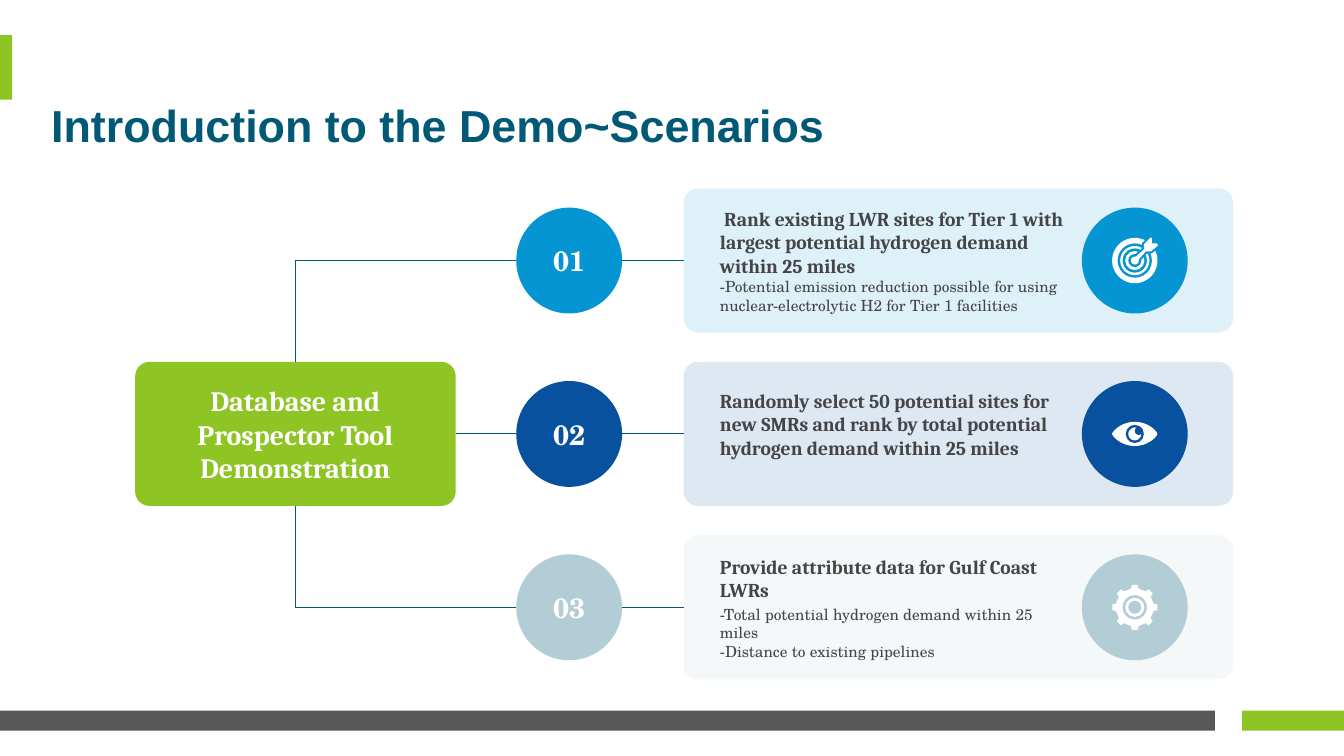
from dataclasses import dataclass
from math import cos, pi, sin

from lxml.etree import SubElement
from pptx import Presentation
from pptx.dml.color import RGBColor
from pptx.enum.shapes import MSO_CONNECTOR as CONN, MSO_SHAPE as SHAPE
from pptx.enum.text import MSO_ANCHOR as ANCHOR, PP_ALIGN as ALIGN
from pptx.oxml.ns import qn
from pptx.util import Inches, Pt


@dataclass(frozen=True)
class Theme:
    green: str = "8EC423"
    gray: str = "58575A"
    teal: str = "015976"
    text: str = "454446"
    white: str = "FFFFFF"
    rows: tuple = ("0595D3", "07519E", "B2CDD6")
    card_alpha: int = 13
    title_font: str = "Arial"
    head_font: str = "Cambria"
    body_font: str = "TeX Gyre Schola"
    title_size: int = 32
    label_size: int = 20
    head_size: int = 14
    body_size: int = 11
    line_width: float = 0.75


class Deck:
    def __init__(self, theme):
        self.t = theme
        self.prs = Presentation()
        self.prs.slide_width = Inches(13.33)
        self.prs.slide_height = Inches(7.5)
        self.s = self.prs.slides.add_slide(self.prs.slide_layouts[6])

    def paint(self, sp, color):
        sp.shadow.inherit = False
        sp.fill.solid()
        sp.fill.fore_color.rgb = RGBColor.from_string(color)
        sp.line.fill.background()

    def shape(self, kind, x, y, w, h, color, alpha=None):
        sp = self.s.shapes.add_shape(kind, Inches(x), Inches(y), Inches(w), Inches(h))
        self.paint(sp, color)
        if kind == SHAPE.ROUNDED_RECTANGLE:
            sp.adjustments[0] = 0.1
        if alpha:
            clr = sp._element.spPr.find(qn("a:solidFill"))[0]
            SubElement(clr, qn("a:alpha"), val=str(alpha * 1000))
        return sp

    def circle(self, cx, cy, d, color):
        return self.shape(SHAPE.OVAL, cx - d / 2, cy - d / 2, d, d, color)

    def rings(self, cx, cy, diameters, colors):
        for i, d in enumerate(diameters):
            self.circle(cx, cy, d, colors[i % 2])

    def polygon(self, cx, cy, points, color, outline=None):
        pts = [(Inches(cx + x), Inches(cy + y)) for x, y in points]
        fb = self.s.shapes.build_freeform(*pts[0])
        fb.add_line_segments(pts[1:], close=True)
        sp = fb.convert_to_shape()
        self.paint(sp, color)
        if outline:
            sp.line.color.rgb = RGBColor.from_string(color)
            sp.line.width = Pt(outline)

    def line(self, x1, y1, x2, y2, bent=False):
        c = self.s.shapes.add_connector(
            CONN.ELBOW if bent else CONN.STRAIGHT,
            Inches(x1), Inches(y1), Inches(x2), Inches(y2))
        c.line.color.rgb = RGBColor.from_string(self.t.teal)
        c.line.width = Pt(self.t.line_width)
        spPr = c._element.spPr
        if bent:
            spPr.find(qn("a:prstGeom")).set("prst", "bentConnector2")
        SubElement(spPr, qn("a:effectLst"))

    def style(self, p, text, font, size, color, bold=True):
        p.add_run().text = text
        f = p.font
        f.name, f.size, f.bold = font, Pt(size), bold
        f.color.rgb = RGBColor.from_string(color)

    def label(self, sp, text, font):
        tf = sp.text_frame
        tf.word_wrap = True
        tf.vertical_anchor = ANCHOR.MIDDLE
        tf.margin_left = tf.margin_right = tf.margin_top = tf.margin_bottom = Inches(0.1)
        p = tf.paragraphs[0]
        p.alignment = ALIGN.CENTER
        self.style(p, text, font, self.t.label_size, self.t.white)

    def textbox(self, x, y, w, h):
        tf = self.s.shapes.add_textbox(Inches(x), Inches(y), Inches(w), Inches(h)).text_frame
        tf.word_wrap = True
        return tf

    def title(self, text):
        p = self.textbox(0.41, 0.98, 11.81, 0.69).paragraphs[0]
        p.line_spacing = 0.9
        self.style(p, text, self.t.title_font, self.t.title_size, self.t.teal)

    def card_text(self, cy, head, notes, gap):
        tf = self.textbox(7.14, cy - 0.55, 3.49, 1.1)
        tf.margin_left = tf.margin_right = tf.margin_top = tf.margin_bottom = 0
        tf.vertical_anchor = ANCHOR.MIDDLE
        self.style(tf.paragraphs[0], head, self.t.head_font, self.t.head_size, self.t.text)
        for i, note in enumerate(notes):
            p = tf.add_paragraph()
            p.space_before = Pt(0 if i else gap)
            self.style(p, note, self.t.body_font, self.t.body_size, self.t.text, False)

    def target_icon(self, cx, cy, color):
        white = self.t.white
        self.rings(cx, cy, (0.45, 0.34, 0.29, 0.24, 0.19, 0.13), (white, color))
        arrow = [(-0.01, -0.02), (0.09, -0.11), (0.09, -0.16), (0.16, -0.23),
                 (0.17, -0.22), (0.17, -0.17), (0.22, -0.17), (0.23, -0.15),
                 (0.16, -0.09), (0.11, -0.09), (0.02, 0.01)]
        self.polygon(cx, cy, arrow, color, 3)
        self.polygon(cx, cy, arrow, white)
        self.circle(cx, cy, 0.08, white)

    def eye_icon(self, cx, cy, color):
        white = self.t.white
        angles = [2 * pi * i / 48 for i in range(48)]
        lens = [(0.225 * cos(a), 0.12 * sin(a) * abs(sin(a)) ** 0.5) for a in angles]
        self.polygon(cx, cy, lens, white)
        self.rings(cx, cy, (0.18, 0.13), (color, white))
        self.circle(cx + 0.04, cy - 0.03, 0.08, color)

    def gear_icon(self, cx, cy, color):
        white = self.t.white
        edge = ((-0.19, 0.19), (-0.13, 0.225), (0.13, 0.225), (0.19, 0.19))
        gear = [(r * cos(k * pi / 4 + a), r * sin(k * pi / 4 + a))
                for k in range(8) for a, r in edge]
        self.polygon(cx, cy, gear, white)
        self.rings(cx, cy, (0.24, 0.19, 0.13), (color, white))


def main():
    t = Theme()
    d = Deck(t)
    number_x, icon_x, card_x, disc = 5.645, 11.255, 6.78, 1.05
    card_w, card_h, root_x, root_w = 5.45, 1.43, 1.34, 3.18
    middle, pitch = 4.305, 1.72
    root_mid = root_x + root_w / 2

    d.shape(SHAPE.RECTANGLE, 0, 7.05, 12.05, 0.2, t.gray)
    d.shape(SHAPE.RECTANGLE, 12.32, 7.05, 1.01, 0.2, t.green)
    d.shape(SHAPE.RECTANGLE, 0, 0.35, 0.12, 0.64, t.green)
    d.title("Introduction to the Demo~Scenarios")

    root = d.shape(SHAPE.ROUNDED_RECTANGLE, root_x, middle - card_h / 2, root_w, card_h, t.green)
    d.label(root, "Database and Prospector Tool Demonstration", t.head_font)

    scenarios = (
        (" Rank existing LWR sites for Tier 1 with largest potential hydrogen demand within 25 miles",
         ("-Potential emission reduction possible for using nuclear-electrolytic H2 for Tier 1 facilities",),
         0, 0.28 - 0.28, d.target_icon),
        ("Randomly select 50 potential sites for new SMRs and rank by total potential hydrogen demand within 25 miles",
         (), 0, -0.1, d.eye_icon),
        ("Provide attribute data for Gulf Coast LWRs",
         ("-Total potential hydrogen demand within 25 miles", "-Distance to existing pipelines"),
         2.2, 0, d.gear_icon),
    )
    for i, (head, notes, gap, shift, icon) in enumerate(scenarios):
        cy = middle + (i - 1) * pitch
        color = t.rows[i]
        d.shape(SHAPE.ROUNDED_RECTANGLE, card_x, cy - card_h / 2, card_w, card_h, color, t.card_alpha)
        d.card_text(cy + shift, head, notes, gap)
        d.circle(icon_x, cy, disc, color)
        icon(icon_x, cy, color)
        d.label(d.circle(number_x, cy, disc, color), f"{i + 1:02}", t.body_font)
        d.line(number_x + disc / 2, cy, card_x, cy)
        if i == 1:
            d.line(root_x + root_w, cy, number_x - disc / 2, cy)
        else:
            d.line(number_x - disc / 2, cy, root_mid, middle + (i - 1) * card_h / 2, bent=True)

    d.prs.save("out.pptx")


if __name__ == "__main__":
    main()
